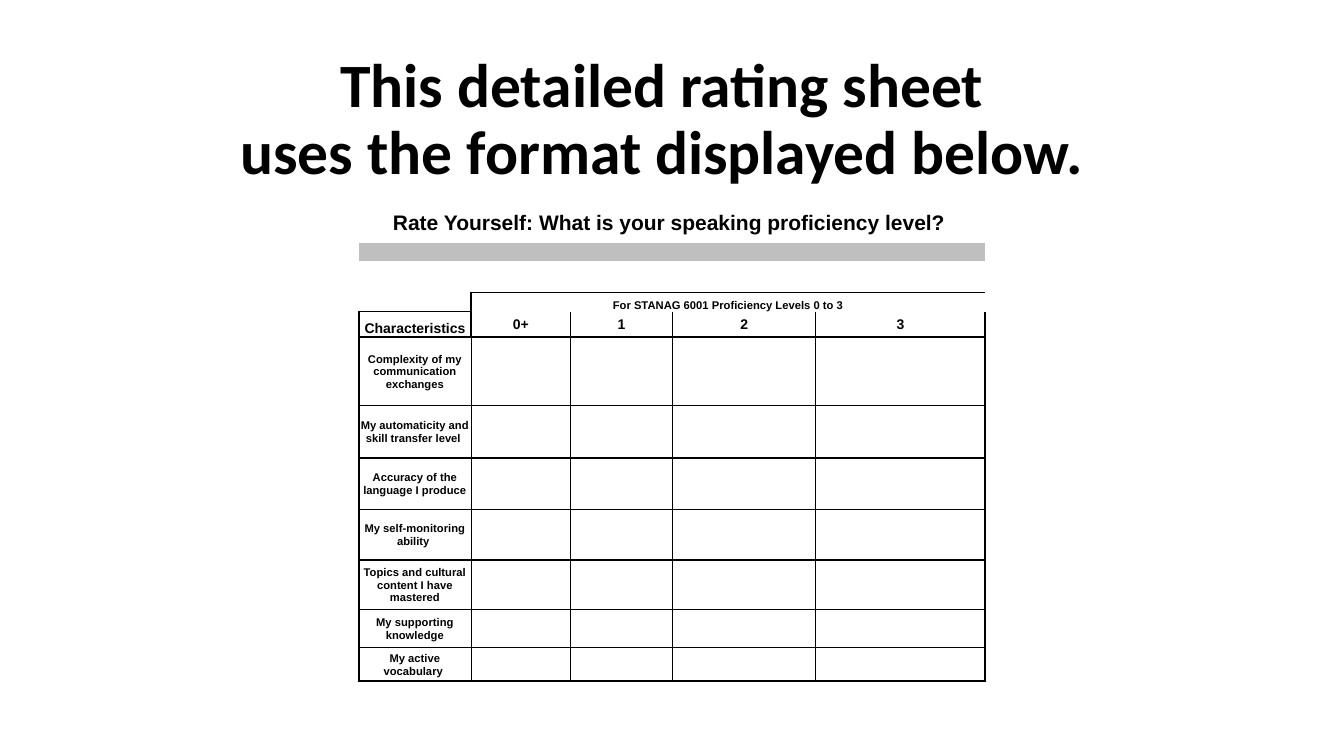
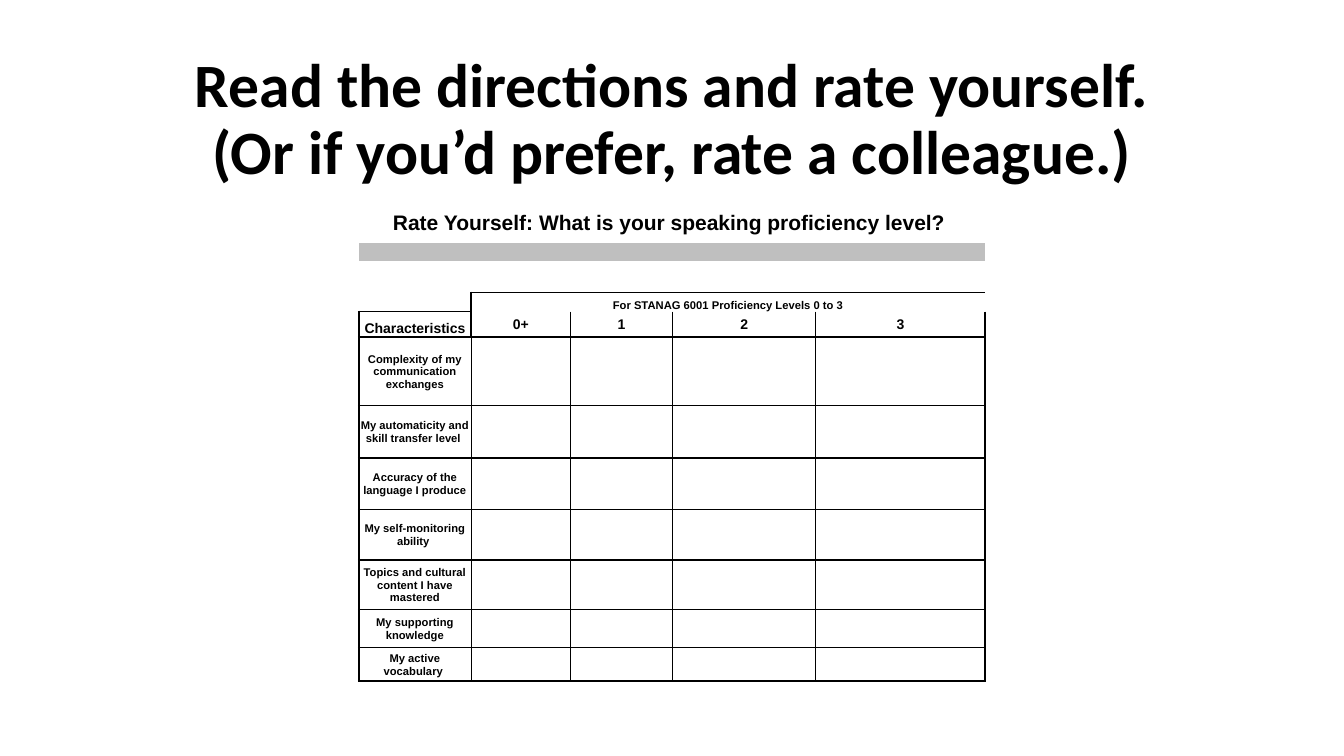
from lxml import etree
from pptx import Presentation
from pptx.dml.color import RGBColor
from pptx.enum.text import MSO_ANCHOR, MSO_AUTO_SIZE, PP_ALIGN
from pptx.oxml.ns import qn
from pptx.util import Cm, Pt

CENTER = PP_ALIGN.CENTER
MIDDLE, BOTTOM = MSO_ANCHOR.MIDDLE, MSO_ANCHOR.BOTTOM
NO_AUTOFIT = MSO_AUTO_SIZE.NONE

BLACK, GRAY = "000000", "BFBFBF"
THIN, MEDIUM, THICK = 0.5, 1, 1.5
NO_STYLE = "{2D5ABB26-0587-4C30-8999-92F81FD0307C}"

COLS = [2.83, 2.51, 2.57, 3.61, 4.27]
ROWS = [1.04, 0.46, 0.41, 0.38, 0.48, 0.64, 1.73,
        1.32, 1.3, 1.27, 1.24, 0.97, 0.84]
HEADING, BAR, GAP, SPACER, SCALE, LEVELS, BODY = range(7)
HEADING_TEXT = "Rate Yourself: What is your speaking proficiency level? "
SCALE_TEXT = "For STANAG 6001 Proficiency Levels 0 to 3"
LEVEL_NAMES = ["0+", "1", "2", "3"]
CHARACTERISTICS = [
    "Complexity of my communication exchanges",
    "My automaticity and skill transfer level ",
    "Accuracy of the language I produce",
    "My self-monitoring ability ",
    "Topics and cultural content I have mastered",
    "My supporting knowledge",
    "My active vocabulary ",
]


def color(hex_value):
    return RGBColor.from_string(hex_value)


def write(tf, text, size=8, font="Arial", bold=True, fill=BLACK, spacing=None):
    p = tf.paragraphs[0]
    p.text = text
    p.alignment = CENTER
    if spacing:
        p.line_spacing = spacing
    for r in p.runs:
        r.font.size, r.font.name, r.font.bold = Pt(size), font, bold
        r.font.color.rgb = color(fill)
    if not p.runs:
        p._p.get_or_add_endParaRPr().set("sz", str(size * 100))


def vertical_rule(row, x):
    """Width of the line at column boundary x beside the given row."""
    if row < SCALE:
        return 0
    if x == len(COLS) or (x == 0 and row > SCALE) or (x == 1 and row < BODY):
        return THICK
    return 0 if row == SCALE else THIN


def horizontal_rule(y, col):
    """Width of the line at row boundary y along the given column."""
    if y < SCALE:
        return 0
    if y < BODY:
        return THICK if (y == SCALE) == (col > 0) else 0
    return THICK if y == BODY and col == 0 else MEDIUM


def set_borders(cell, row, col):
    widths = {
        "a:lnL": vertical_rule(row, col),
        "a:lnR": vertical_rule(row, col + 1),
        "a:lnT": horizontal_rule(row, col),
        "a:lnB": horizontal_rule(row + 1, col),
    }
    tcPr = cell._tc.get_or_add_tcPr()
    for i, (tag, width) in enumerate(widths.items()):
        ln = etree.Element(qn(tag), w=str(Pt(width)))
        tcPr.insert(i, ln)
        if width:
            solid = etree.SubElement(ln, qn("a:solidFill"))
            etree.SubElement(solid, qn("a:srgbClr"), val=BLACK)
        else:
            etree.SubElement(ln, qn("a:noFill"))


class Deck:
    def __init__(self):
        self.prs = Presentation()
        self.prs.slide_width, self.prs.slide_height = Cm(33.87), Cm(19.05)

    def add_slide(self):
        self.s = self.prs.slides.add_slide(self.prs.slide_layouts[5])

    def title(self, text, left, width):
        sp = self.s.shapes.title
        sp.left, sp.top, sp.width, sp.height = Cm(left), Cm(1.02), Cm(width), Cm(4.06)
        tf = sp.text_frame
        tf.word_wrap, tf.auto_size, tf.vertical_anchor = True, NO_AUTOFIT, MIDDLE
        write(tf, text, size=44, font="Calibri", spacing=0.9)

    def rating_sheet(self):
        frame = self.s.shapes.add_table(len(ROWS), len(COLS), Cm(9.04), Cm(5.08),
                                        Cm(sum(COLS)), Cm(sum(ROWS)))
        table = frame.table
        table.first_row = table.horz_banding = False
        table._tbl.tblPr.find(qn("a:tableStyleId")).text = NO_STYLE
        for column, width in zip(table.columns, COLS):
            column.width = Cm(width)
        for row, height in zip(table.rows, ROWS):
            row.height = Cm(height)

        content = {(HEADING, 0): (HEADING_TEXT, 15),
                   (SCALE, 1): (SCALE_TEXT, 8),
                   (LEVELS, 0): ("Characteristics", 10)}
        for i, name in enumerate(LEVEL_NAMES, 1):
            content[LEVELS, i] = (name, 10)
        for i, name in enumerate(CHARACTERISTICS, BODY):
            content[i, 0] = (name, 8)

        for row in range(len(ROWS)):
            for col in range(len(COLS)):
                cell = table.cell(row, col)
                cell.margin_left = cell.margin_right = cell.margin_top = Cm(0.03)
                cell.margin_bottom = 0
                at_bottom = (row, col) in [(SCALE, 1), (LEVELS, 0)]
                cell.vertical_anchor = BOTTOM if at_bottom else MIDDLE
                text, size = content.get((row, col), ("", 8))
                write(cell.text_frame, text, size=size)
                if row == BAR:
                    cell.fill.solid()
                    cell.fill.fore_color.rgb = color(GRAY)
                else:
                    cell.fill.background()
                set_borders(cell, row, col)

        last = len(COLS) - 1
        for row, first in [(HEADING, 0), (BAR, 0), (GAP, 0), (SCALE, 1)]:
            table.cell(row, first).merge(table.cell(row, last))


def main():
    deck = Deck()
    for text, left, width in [
        ("This detailed rating sheet\nuses the format displayed below.", 1.83, 29.72),
        ("Read the directions and rate yourself.\n"
         "(Or if you’d prefer, rate a colleague.)", 2.34, 29.21),
    ]:
        deck.add_slide()
        deck.title(text, left, width)
        deck.rating_sheet()
    deck.prs.save("out.pptx")


if __name__ == "__main__":
    main()
